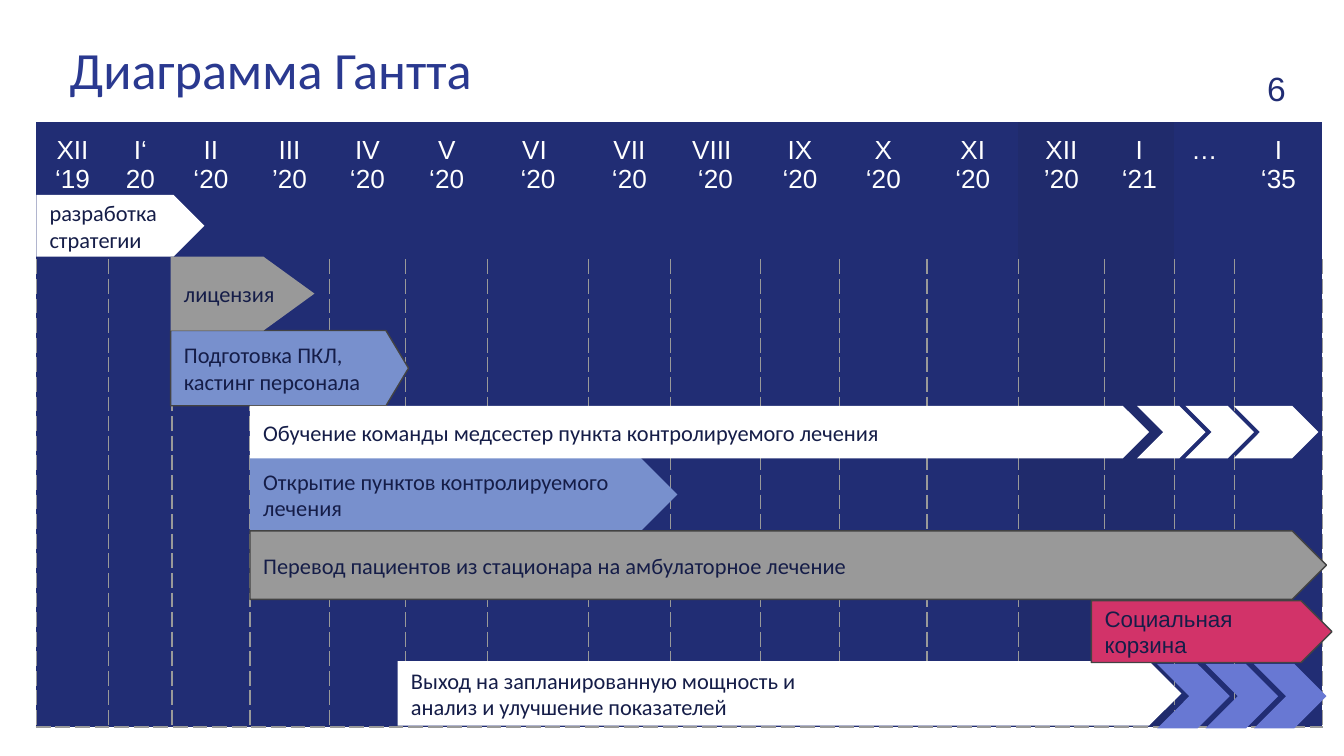
from dataclasses import dataclass
from typing import Optional

import pptx
import pptx.dml.color
import pptx.enum.shapes
import pptx.enum.text
import pptx.oxml
import pptx.oxml.ns
import pptx.util

RGB = pptx.dml.color.RGBColor
SHAPE = pptx.enum.shapes.MSO_SHAPE
ALIGN = pptx.enum.text.PP_ALIGN
ANCHOR = pptx.enum.text.MSO_ANCHOR
AUTO_SIZE = pptx.enum.text.MSO_AUTO_SIZE

EMU_PER_PX = 9144  # 100 px to the inch
INSET = 10

WHITE = RGB(0xFF, 0xFF, 0xFF)
NAVY = RGB(0x21, 0x2D, 0x74)
DARK_NAVY = RGB(0x20, 0x2B, 0x6C)
INK = RGB(0x15, 0x1D, 0x48)
TITLE_BLUE = RGB(0x2A, 0x39, 0x90)
SKY = RGB(0x78, 0x90, 0xCD)
VIOLET = RGB(0x68, 0x78, 0xD3)
GREY = RGB(0x99, 0x99, 0x99)
CRIMSON = RGB(0xD2, 0x33, 0x69)
OUTLINE = RGB(0x43, 0x43, 0x43)

NO_GRID_STYLE = "{2D5ABB26-0587-4C30-8999-92F81FD0307C}"


@dataclass(frozen=True)
class Month:
    label: str
    width: int
    fill: RGB = NAVY


@dataclass(frozen=True)
class Chevrons:
    lefts: tuple[int, ...]
    widths: tuple[int, ...]
    top: int
    fill: RGB


@dataclass(frozen=True)
class Bar:
    text: str
    box: tuple[int, int, int, int]
    fill: RGB
    line: Optional[RGB] = None
    tip: float = 0.5
    font: str = "Calibri"
    chevrons: Optional[Chevrons] = None


MONTHS = [
    Month("XII ‘19", 54), Month("I‘\n20", 47), Month("II ‘20", 58),
    Month("III ’20", 59), Month("IV ‘20", 57), Month("V ‘20", 61),
    Month("VI \n‘20", 75), Month("VII ‘20", 61), Month("VIII \n‘20", 67),
    Month("IX\n‘20", 59), Month("X\n‘20", 65), Month("XI\n‘20", 68),
    Month("XII\n’20", 64, DARK_NAVY), Month("I\n‘21", 52, DARK_NAVY),
    Month("…", 45), Month("I\n‘35", 65),
]

BARS = [
    Bar("разработка стратегии", (27, 145, 125, 46), WHITE),
    Bar("Открытие пунктов контролируемого лечения", (186, 341, 318, 54), SKY),
    Bar("Подготовка ПКЛ,\nкастинг персонала", (127, 246, 177, 56), SKY, OUTLINE, 0.3),
    Bar("Выход на запланированную мощность и\nанализ и улучшение показателей",
        (296, 492, 583, 48), WHITE,
        chevrons=Chevrons((861, 897, 933), (54, 54, 54), 494, VIOLET)),
    Bar("лицензия", (127, 191, 107, 55), GREY, tip=0.69),
    Bar("Социальная корзина", (812, 447, 179, 46), CRIMSON, OUTLINE, font="Arial"),
    Bar("Перевод пациентов из стационара на амбулаторное лечение",
        (186, 395, 801, 51), GREY, OUTLINE),
    Bar("Обучение команды медсестер пункта контролируемого лечения",
        (186, 302, 669, 39), WHITE,
        chevrons=Chevrons((846, 882, 918), (51, 51, 63), 302, WHITE)),
]


def px(n: int) -> int:
    return pptx.util.Emu(n * EMU_PER_PX)


def style_text(tf, size: int, color: RGB, font: str, align=ALIGN.LEFT) -> None:
    for p in tf.paragraphs:
        p.alignment = align
        for r in p.runs:
            r.font.size = pptx.util.Pt(size)
            r.font.name = font
            r.font.color.rgb = color


def set_margins(target) -> None:
    for side in ("left", "right", "top", "bottom"):
        setattr(target, f"margin_{side}", px(INSET))


def add_label(s, text: str, box: tuple[int, int, int, int], size: int,
              color: RGB, font: str):
    tf = s.shapes.add_textbox(*map(px, box)).text_frame
    tf.text = text
    style_text(tf, size, color, font)
    return tf


def dash_borders(cell) -> None:
    tc_pr = cell._tc.get_or_add_tcPr()
    for i, tag in enumerate(("lnL", "lnR", "lnB")):
        tc_pr.insert(i, pptx.oxml.parse_xml(
            f'<a:{tag} {pptx.oxml.ns.nsdecls("a")} w="9525"><a:solidFill>'
            f'<a:srgbClr val="{GREY}"/></a:solidFill><a:prstDash val="dash"/></a:{tag}>'))


def add_calendar(s, months: list[Month]) -> None:
    frame = s.shapes.add_table(2, len(months), px(27), px(91), px(957), px(450))
    table = frame.table
    table.first_row = table.horz_banding = False
    table._tbl.tblPr.find(pptx.oxml.ns.qn("a:tableStyleId")).text = NO_GRID_STYLE
    table.rows[0].height, table.rows[1].height = px(102), px(348)
    for i, month in enumerate(months):
        table.columns[i].width = px(month.width)
        head, body = table.cell(0, i), table.cell(1, i)
        for cell in (head, body):
            cell.fill.solid()
            cell.fill.fore_color.rgb = month.fill
        set_margins(head)
        head.text_frame.text = month.label
        style_text(head.text_frame, 14, WHITE, "Arial", ALIGN.CENTER)
        dash_borders(body)


def add_arrow(shapes, kind, box: tuple[int, int, int, int], fill: RGB,
              line: Optional[RGB] = None, tip: float = 0.5):
    sp = shapes.add_shape(kind, *map(px, box))
    sp.shadow.inherit = False
    sp.adjustments[0] = tip
    sp.fill.solid()
    sp.fill.fore_color.rgb = fill
    if line is None:
        sp.line.fill.background()
    else:
        sp.line.color.rgb = line
        sp.line.width = pptx.util.Pt(0.75)
    return sp


def add_bar(s, bar: Bar) -> None:
    shapes = s.shapes.add_group_shape().shapes if bar.chevrons else s.shapes
    sp = add_arrow(shapes, SHAPE.PENTAGON, bar.box, bar.fill, bar.line, bar.tip)
    tf = sp.text_frame
    tf.text = bar.text
    tf.word_wrap = True
    tf.vertical_anchor = ANCHOR.MIDDLE
    set_margins(tf)
    style_text(tf, 12, INK, bar.font)
    if bar.chevrons:
        tail = bar.chevrons
        for left, width in zip(tail.lefts, tail.widths):
            add_arrow(shapes, SHAPE.CHEVRON, (left, tail.top, width, bar.box[3]), tail.fill)


def main() -> None:
    prs = pptx.Presentation()
    prs.slide_width = px(1000)
    prs.slide_height = prs.slide_width * 9 // 16
    s = prs.slides.add_slide(prs.slide_layouts[6])

    # Month grid
    add_calendar(s, MONTHS)

    # Title
    title = add_label(s, "Диаграмма Гантта", (42, 18, 932, 66), 28, TITLE_BLUE, "Calibri")
    title.word_wrap = True
    set_margins(title)

    # Task bars
    for bar in BARS:
        add_bar(s, bar)

    # Page number
    number = add_label(s, "6", (933, 46, 34, 40), 18, NAVY, "Arial")
    number.word_wrap = False
    number.auto_size = AUTO_SIZE.SHAPE_TO_FIT_TEXT

    prs.save("out.pptx")


if __name__ == "__main__":
    main()
